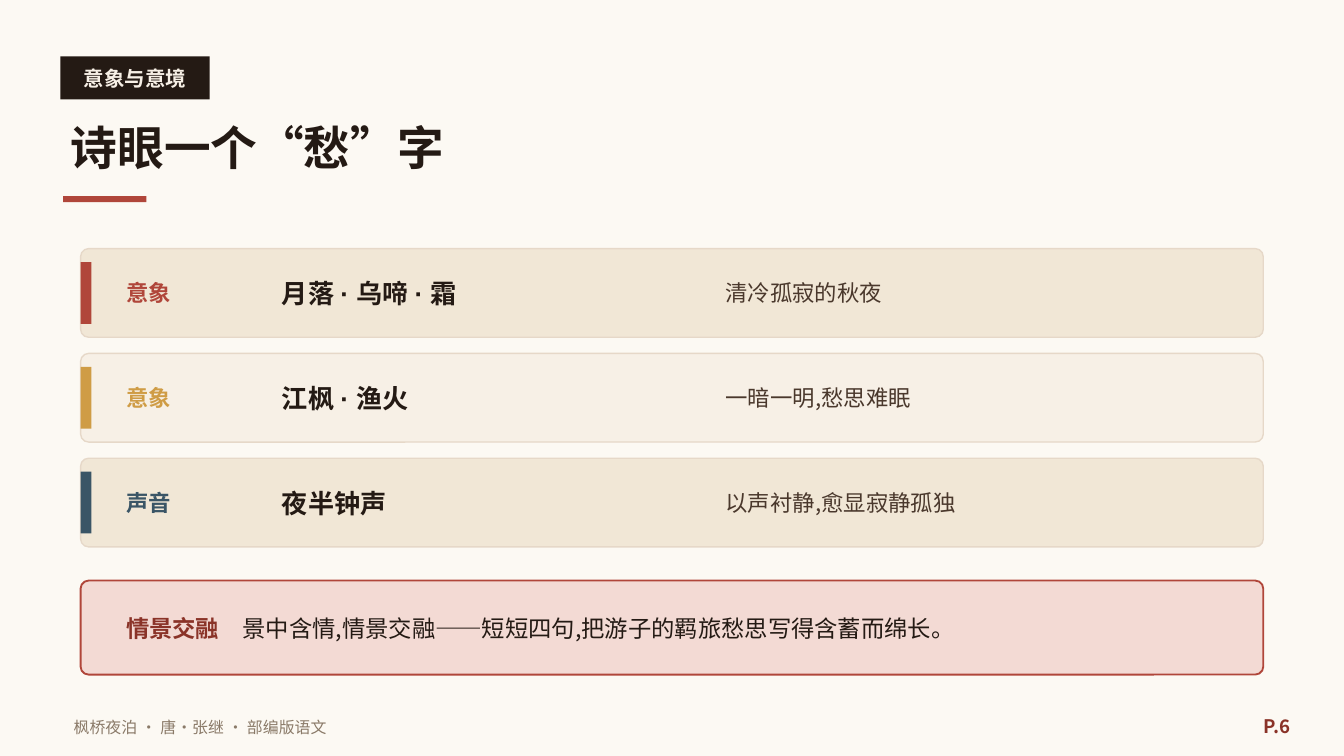
"""Build the slide on the key word of the poem."""
from lxml import etree
from pptx import Presentation
from pptx.dml.color import RGBColor
from pptx.enum import shapes, text
from pptx.oxml import ns
from pptx.util import Pt

SANS = "Noto Sans CJK SC"
LATIN = "Arial"
PAPER = RGBColor(0xFC, 0xF9, 0xF3)
CREAM = RGBColor(0xF7, 0xF0, 0xE6)
SAND = RGBColor(0xF1, 0xE7, 0xD6)
EDGE = RGBColor(0xE6, 0xD8, 0xC8)
INK = RGBColor(0x24, 0x1A, 0x14)
BROWN = RGBColor(0x4A, 0x38, 0x2C)
GREY = RGBColor(0x8A, 0x7A, 0x68)
RED = RGBColor(0xB0, 0x46, 0x3A)
WINE = RGBColor(0x8A, 0x33, 0x28)
ROSE = RGBColor(0xF3, 0xDA, 0xD4)
GOLD = RGBColor(0xCF, 0x9C, 0x45)
BLUE = RGBColor(0x3A, 0x55, 0x66)

LEFT, WIDTH, INNER = 43.2, 633.6, 60.48
TOP, STEP, HIGH = 133.2, 56.16, 47.52
RADIUS = 4.32
ROWS = [
    (RED, SAND, "意象", "月落 · 乌啼 · 霜", "清冷孤寂的秋夜"),
    (GOLD, CREAM, "意象", "江枫 · 渔火", "一暗一明,愁思难眠"),
    (BLUE, SAND, "声音", "夜半钟声", "以声衬静,愈显寂静孤独"),
]


def add_block(slide, box, fill, kind=shapes.MSO_SHAPE.RECTANGLE):
    """Add a filled shape without outline or shadow."""
    block = slide.shapes.add_shape(kind, *map(Pt, box))
    block.shadow.inherit = False
    block.fill.solid()
    block.fill.fore_color.rgb = fill
    block.line.fill.background()
    return block


def add_card(slide, box, fill, edge, weight):
    """Add a card with rounded corners and an outline."""
    card = add_block(slide, box, fill, shapes.MSO_SHAPE.ROUNDED_RECTANGLE)
    card.adjustments[0] = RADIUS / box[3]
    card.line.color.rgb = edge
    card.line.width = Pt(weight)


def style_run(run, size, color, bold=False, face=SANS):
    """Set the font of a run for Latin and Chinese text."""
    font = run.font
    font.size, font.bold, font.name = Pt(size), bold, face
    font.color.rgb = color
    props = run._r.get_or_add_rPr()
    etree.SubElement(props, ns.qn("a:ea"), typeface=SANS)


def add_label(slide, box, words, size, color, bold=False, face=SANS,
              align=text.PP_ALIGN.LEFT):
    """Add a line of text, centred vertically, and return its paragraph."""
    frame = slide.shapes.add_textbox(*map(Pt, box)).text_frame
    frame.word_wrap = True
    frame.vertical_anchor = text.MSO_ANCHOR.MIDDLE
    para = frame.paragraphs[0]
    para.text = words
    para.alignment = align
    style_run(para.runs[0], size, color, bold, face)
    return para


def add_head(slide):
    """Add the tag, the title and its short rule."""
    add_block(slide, (32.4, 30.24, 79.92, 23.04), INK)
    add_label(slide, (32.4, 29.52, 79.92, 24.48), "意象与意境", 11, CREAM,
              True, align=text.PP_ALIGN.CENTER)
    add_label(slide, (30.96, 56.16, 648, 44.64), "诗眼一个“愁”字", 25, INK, True)
    add_block(slide, (33.84, 105.12, 44.64, 3.2), RED)


def add_row(slide, top, row):
    """Add a card with an accent bar, a kind, an image and a mood."""
    accent, fill, kind, image, mood = row
    add_card(slide, (LEFT, top, WIDTH, HIGH), fill, EDGE, 0.75)
    add_block(slide, (LEFT, top + 7.2, 5.76, HIGH - 14.4), accent)
    add_label(slide, (INNER, top, 79.2, HIGH), kind, 12, accent, True)
    add_label(slide, (144, top, 230.4, HIGH), image, 14, INK, True, LATIN)
    add_label(slide, (381.6, top, 280.8, HIGH), mood, 12, BROWN)


def add_sum(slide):
    """Add the summary card."""
    top, high = 311.04, 50.4
    add_card(slide, (LEFT, top, WIDTH, high), ROSE, RED, 1)
    para = add_label(slide, (INNER, top, 604.8, high), "情景交融　", 12.5, WINE, True)
    para.line_spacing = Pt(16)
    run = para.add_run()
    run.text = "景中含情,情景交融——短短四句,把游子的羁旅愁思写得含蓄而绵长。"
    style_run(run, 12.5, INK)


def add_foot(slide):
    """Add the source line and the page number."""
    add_label(slide, (32.4, 378.72, 432, 21.6), "枫桥夜泊 · 唐·张继 · 部编版语文", 8.5, GREY)
    add_label(slide, (655.2, 377.28, 43.2, 23.04), "P.6", 10, WINE, True,
              align=text.PP_ALIGN.RIGHT)


def main():
    """Build and save the deck."""
    deck = Presentation()
    deck.slide_width, deck.slide_height = Pt(720), Pt(405)
    slide = deck.slides.add_slide(deck.slide_layouts[6])
    slide.background.fill.solid()
    slide.background.fill.fore_color.rgb = PAPER
    add_head(slide)
    for index, row in enumerate(ROWS):
        add_row(slide, TOP + index * STEP, row)
    add_sum(slide)
    add_foot(slide)
    deck.save("out.pptx")


if __name__ == "__main__":
    main()
